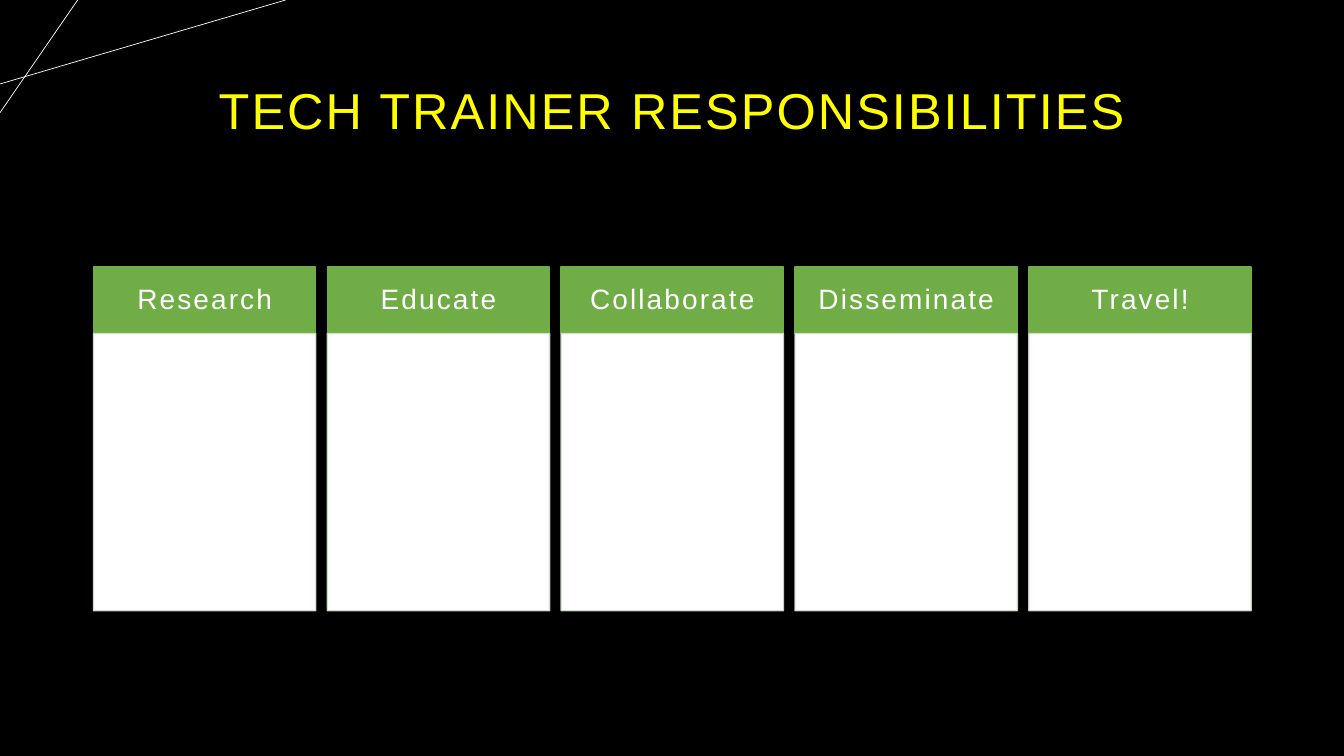
from dataclasses import dataclass

from lxml import etree
from pptx import Presentation
from pptx.dml.color import RGBColor
from pptx.enum.shapes import MSO_CONNECTOR, MSO_SHAPE
from pptx.enum.text import MSO_ANCHOR, PP_ALIGN
from pptx.oxml.ns import qn
from pptx.util import Pt


@dataclass(frozen=True)
class Theme:
    font: str = "Arial"
    background: RGBColor = RGBColor(0x00, 0x00, 0x00)
    title: RGBColor = RGBColor(0xFF, 0xFF, 0x00)
    header: RGBColor = RGBColor(0x70, 0xAD, 0x47)
    panel: RGBColor = RGBColor(0xFF, 0xFF, 0xFF)
    panel_edge: RGBColor = RGBColor(0xD5, 0xE3, 0xCF)
    white: RGBColor = RGBColor(0xFF, 0xFF, 0xFF)
    title_size: int = 36
    header_size: int = 20


theme = Theme()


def set_centred_text(shape, text, size, color):
    frame = shape.text_frame
    frame.text = text
    frame.word_wrap = True
    frame.vertical_anchor = MSO_ANCHOR.MIDDLE
    paragraph = frame.paragraphs[0]
    paragraph.alignment = PP_ALIGN.CENTER
    paragraph.line_spacing = 0.9
    run = paragraph.runs[0]
    run.font.name = theme.font
    run.font.size = Pt(size)
    run.font.color.rgb = color
    run.font._element.set("spc", "150")  # letter spacing, 1.5 pt


def add_box(top, left, width, height, fill, edge):
    box = slide.shapes.add_shape(
        MSO_SHAPE.RECTANGLE, Pt(left), Pt(top), Pt(width), Pt(height))
    box.shadow.inherit = False
    box.fill.solid()
    box.fill.fore_color.rgb = fill
    box.line.color.rgb = edge
    box.line.width = Pt(1)
    return box


presentation = Presentation()
presentation.slide_width = Pt(960)
presentation.slide_height = Pt(540)
slide = presentation.slides.add_slide(presentation.slide_layouts[5])
slide.background.fill.solid()
slide.background.fill.fore_color.rgb = theme.background

# Crossing lines in the top left corner
for x1, y1, x2, y2 in [(0, 60, 204, 0), (55.5, 0, 0, 80.5)]:
    corner_line = slide.shapes.add_connector(
        MSO_CONNECTOR.STRAIGHT, Pt(x1), Pt(y1), Pt(x2), Pt(y2))
    corner_line.line.color.rgb = theme.white
    corner_line.line.width = Pt(0.5)
    etree.SubElement(corner_line._element.spPr, qn("a:effectLst"))

title = slide.shapes.title
title.left, title.top, title.width, title.height = Pt(66), Pt(28.75), Pt(828), Pt(104.4)
set_centred_text(title, "TECH TRAINER RESPONSIBILITIES", theme.title_size, theme.title)

# One column per responsibility: a header above an empty panel
FIRST_LEFT, PITCH, WIDTH = 66.8, 167.04, 158.8
HEADER_TOP, HEADER_HEIGHT, PANEL_HEIGHT = 190.6, 47.64, 198
responsibilities = ["Research", "Educate", "Collaborate", "Disseminate", "Travel!"]

for column, responsibility in enumerate(responsibilities):
    left = FIRST_LEFT + column * PITCH
    header = add_box(HEADER_TOP, left, WIDTH, HEADER_HEIGHT, theme.header, theme.header)
    frame = header.text_frame
    frame.margin_left = frame.margin_right = Pt(12.25)
    frame.margin_top = frame.margin_bottom = Pt(12.25)
    set_centred_text(header, responsibility, theme.header_size, theme.white)

    panel = add_box(HEADER_TOP + HEADER_HEIGHT, left, WIDTH, PANEL_HEIGHT,
                    theme.panel, theme.panel_edge)
    edge_color = panel.line._ln.find(".//" + qn("a:srgbClr"))
    etree.SubElement(edge_color, qn("a:alpha"), val="90000")

presentation.save("out.pptx")
